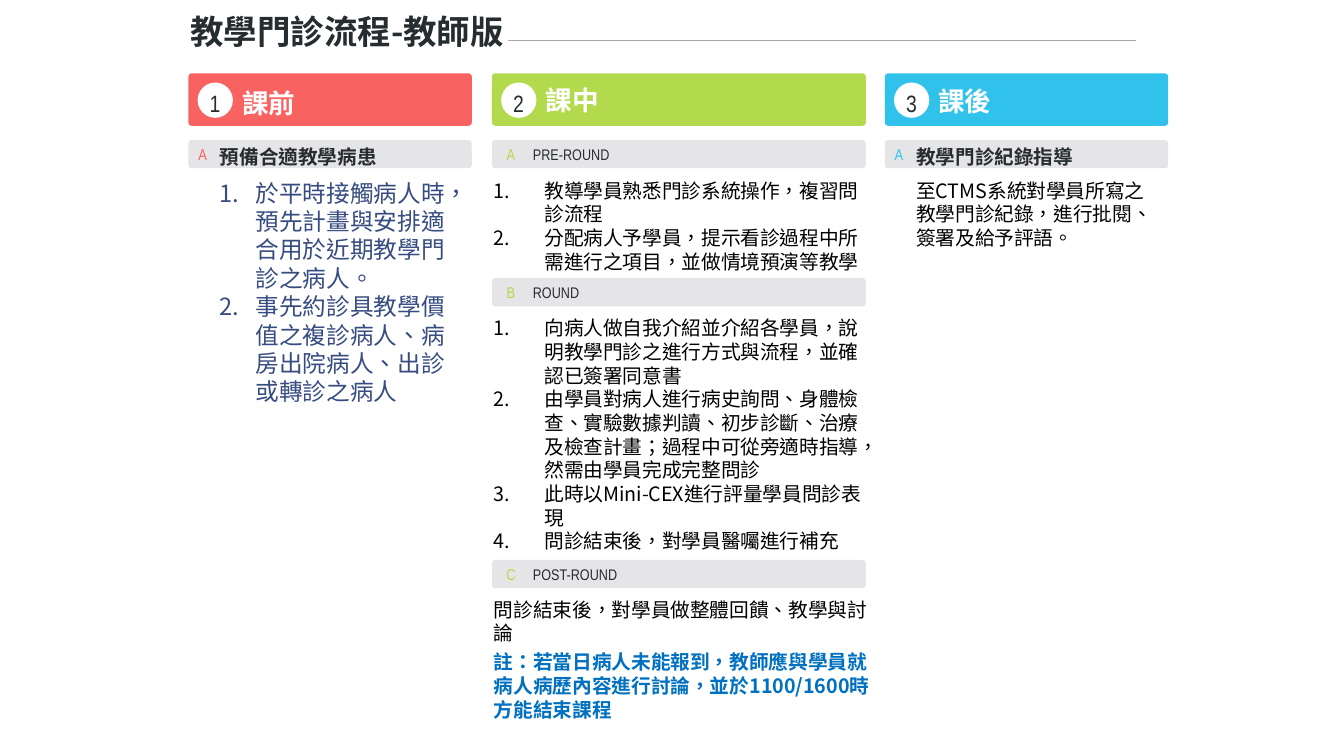
"""Builds the teaching clinic workflow slide, teacher version."""
from lxml import etree
from pptx import Presentation
from pptx import util as u
from pptx.dml.color import RGBColor
from pptx.enum import lang, shapes, text
from pptx.oxml.ns import qn

SANS, SLIM = "Noto Sans CJK SC", "Arial Narrow"
DARK, GREEN = "252D30", "B3DA4D"
LEFT, CENTER = text.PP_ALIGN.LEFT, text.PP_ALIGN.CENTER

deck = Presentation()
deck.slide_width, deck.slide_height = u.Cm(33.87), u.Cm(19.05)
slide = deck.slides.add_slide(deck.slide_layouts[5])


def block(kind, x, y, w, h, color, round=None):
    box = slide.shapes.add_shape(kind, u.Cm(x), u.Cm(y), u.Cm(w), u.Cm(h))
    box.shadow.inherit = False
    box.fill.solid()
    box.fill.fore_color.rgb = RGBColor.from_string(color)
    box.line.fill.background()
    if round:
        box.adjustments[0] = round
    return box


def write(x, y, w, h, lines, size, color, face=SANS, bold=False,
          align=LEFT, indent=0, box=None):
    box = box or slide.shapes.add_textbox(0, 0, 0, 0)
    box.left, box.top, box.width, box.height = map(u.Cm, (x, y, w, h))
    frame = box.text_frame
    frame.word_wrap = True
    frame.auto_size = text.MSO_AUTO_SIZE.NONE
    frame.vertical_anchor = text.MSO_ANCHOR.TOP
    frame.margin_left = frame.margin_right = u.Cm(0.05)
    frame.margin_top = frame.margin_bottom = u.Cm(0.05)
    frame.text = "\n".join(lines)
    for para in frame.paragraphs:
        para.alignment = align
        if indent:
            props = para._p.get_or_add_pPr()
            props.set("marL", str(u.Cm(indent)))
            props.set("indent", str(-u.Cm(indent)))
            etree.SubElement(props, qn("a:buFont"), typeface="+mj-lt")
            etree.SubElement(props, qn("a:buAutoNum"), type="arabicPeriod")
        font = para.font
        font.name, font.size, font.bold = face, u.Pt(size), bold
        font.color.rgb = RGBColor.from_string(color)
        for run in para.runs:
            run.font.language_id = lang.MSO_LANGUAGE_ID.TRADITIONAL_CHINESE


write(4.75, 0.23, 10.44, 1.09, ["教學門診流程-教師版"], 23.9, DARK, bold=True,
      box=slide.shapes.title)
rule = slide.shapes.add_connector(shapes.MSO_CONNECTOR.STRAIGHT, u.Cm(12.8),
                                  u.Cm(1.02), u.Cm(28.63), u.Cm(1.02))
rule.line.color.rgb = RGBColor.from_string("A7A7A7")
rule.line.width = u.Pt(1)
etree.SubElement(rule._element.spPr, qn("a:effectLst"))

phases = [
    ("1", "課前", 4.75, 7.14, 2.13, "F86261"),
    ("2", "課中", 12.4, 9.42, 2.06, GREEN),
    ("3", "課後", 22.3, 7.14, 2.08, "30C2EB"),
]
for num, name, x, w, y, color in phases:
    block(shapes.MSO_SHAPE.ROUNDED_RECTANGLE, x, 1.85, w, 1.32, color, 0.062)
    block(shapes.MSO_SHAPE.OVAL, x + 0.23, 2.08, 0.89, 0.89, "FFFFFF")
    write(x + 0.29, 2.18, 0.76, 0.81, [num], 16.9, DARK, SLIM, align=CENTER)
    write(x + 1.3, y, 5.36, 0.91, [name], 19, "FFFFFF", SLIM, True)

steps = [
    ("A", "預備合適教學病患", 4.75, 3.53, 7.14, "F86261", True),
    ("A", "PRE-ROUND", 12.4, 3.53, 9.42, GREEN, False),
    ("B", "ROUND", 12.4, 7.01, 9.42, GREEN, False),
    ("C", "POST-ROUND", 12.4, 14.11, 9.42, GREEN, False),
    ("A", "教學門診紀錄指導", 22.3, 3.53, 7.14, "30C2EB", True),
]
for mark, name, x, y, w, color, bold in steps:
    bar = block(shapes.MSO_SHAPE.ROUNDED_RECTANGLE, x, y, w, 0.71, "CFCDD0", 0.116)
    tint = bar._element.spPr.find(".//" + qn("a:srgbClr"))
    etree.SubElement(tint, qn("a:alpha"), val="53000")
    tab = 0.71 if bold else 0.95
    write(x, y + 0.07, tab, 0.56, [mark], 11.2, color, SLIM, align=CENTER)
    write(x + tab + 0.03, y + 0.07, 5.69, 0.69, [name], 14 if bold else 11,
          "272D2F", SLIM, bold)

write(5.49, 4.45, 6.22, 6.6, [
    "於平時接觸病人時，預先計畫與安排適合用於近期教學門診之病人。",
    "事先約診具教學價值之複診病人、病房出院病人、出診或轉診之病人",
], 16.9, "374C81", indent=0.9)
write(23.04, 4.45, 6.22, 2.51, [
    "至CTMS系統對學員所寫之教學門診紀錄，進行批閱、簽署及給予評語。",
], 14.1, "000000")

pre = [
    "教導學員熟悉門診系統操作，複習問診流程",
    "分配病人予學員，提示看診過程中所需進行之項目，並做情境預演等教學",
]
during = [
    "向病人做自我介紹並介紹各學員，說明教學門診之進行方式與流程，並確認已簽署同意書",
    "由學員對病人進行病史詢問、身體檢查、實驗數據判讀、初步診斷、治療及檢查計畫；"
    "過程中可從旁適時指導，然需由學員完成完整問診",
    "此時以Mini-CEX進行評量學員問診表現",
    "問診結束後，對學員醫囑進行補充",
]
post = ["問診結束後，對學員做整體回饋、教學與討論"]
note = ["註：若當日病人未能報到，教師應與學員就病人病歷內容進行討論，"
        "並於1100/1600時方能結束課程"]
for y, h, lines, color, bold, indent in [
    (4.45, 2.51, pre, "000000", False, 1.27),
    (7.92, 6.12, during, "000000", False, 1.27),
    (15.01, 1.32, post, "000000", False, 0),
    (16.33, 1.91, note, "0070C0", True, 0),
]:
    write(12.4, y, 9.65, h, lines, 14.1, color, bold=bold, indent=indent)

deck.save("out.pptx")
